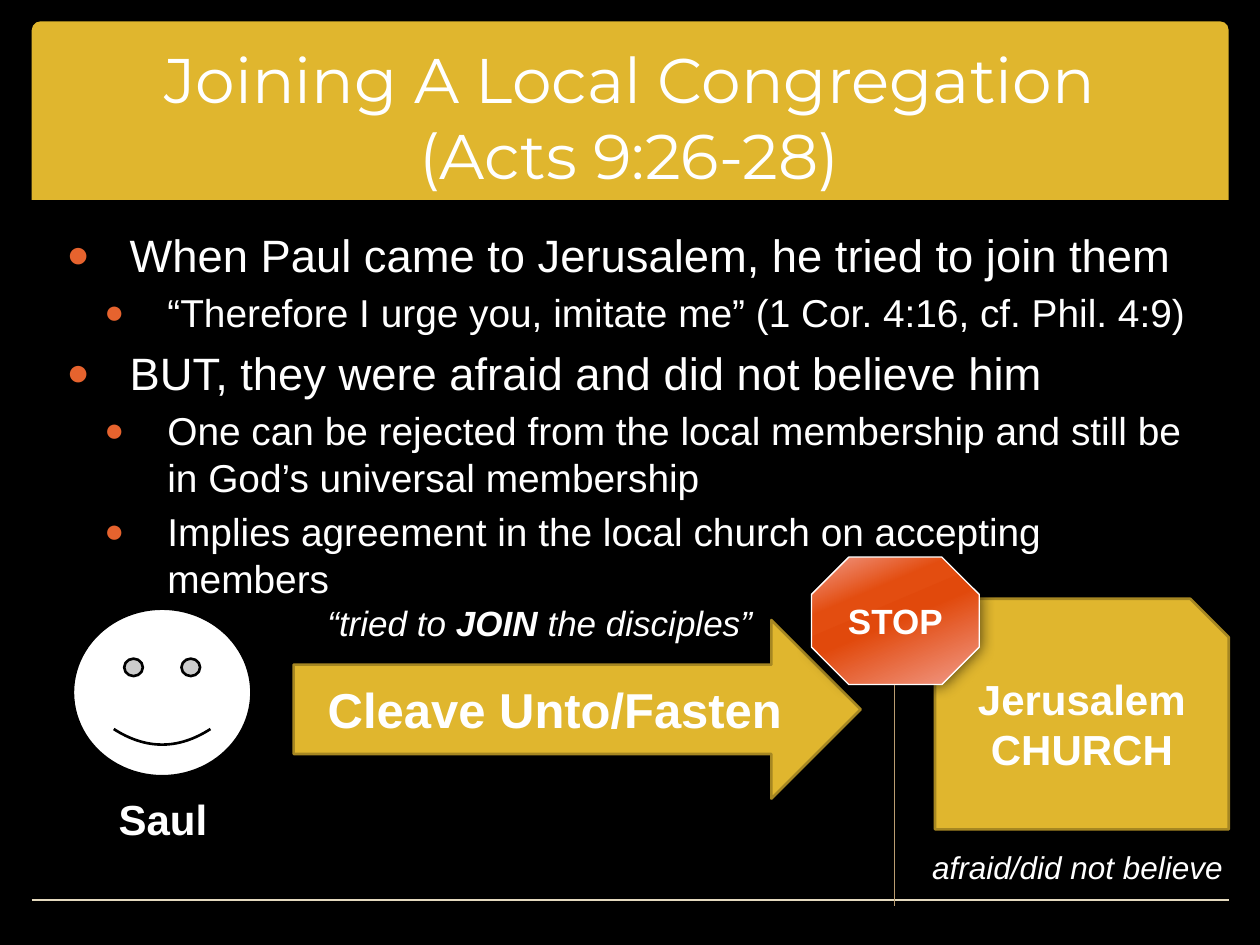
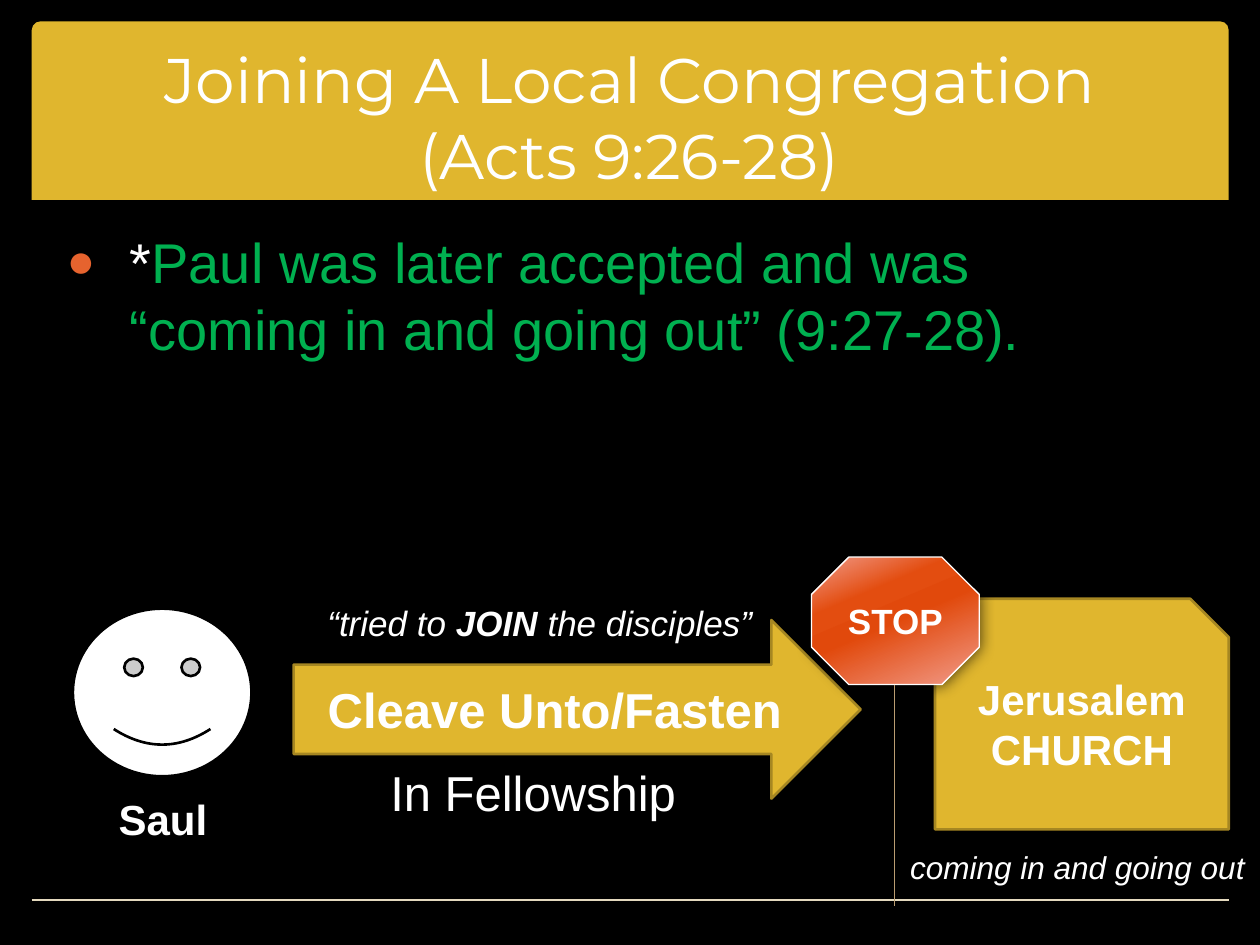
from lxml.etree import SubElement
from pptx import Presentation
from pptx.dml.color import RGBColor
from pptx.enum.shapes import MSO_CONNECTOR, MSO_SHAPE
from pptx.enum.text import MSO_ANCHOR, MSO_AUTO_SIZE, PP_ALIGN
from pptx.oxml.ns import qn
from pptx.util import Cm, Pt

BLACK, WHITE, GREEN = "000000", "FFFFFF", "00B050"
GOLD, DARK_GOLD, CREAM, TAN = "E0B62E", "A68722", "E4D9BE", "BA9D72"
BULLET = "E6632E"
STOP_STOPS = [(0, "F19B8A"), (30, "E34D10"), (50, "E1490C"), (100, "F19B8A")]
TITLE_FONT, BODY_FONT = "Montserrat", "Arial"


def rgb(hex_color):
    return RGBColor.from_string(hex_color)


def add_xml(parent, tag, **attributes):
    return SubElement(parent, qn(tag), {k: str(v) for k, v in attributes.items()})


def place(shape, box):
    shape.left, shape.top, shape.width, shape.height = map(Cm, box)


class Deck:
    def __init__(self):
        self.prs = Presentation()
        self.prs.slide_width, self.prs.slide_height = Cm(25.4), Cm(19.05)
        self.layout = self.prs.slide_layouts[1]
        background = self.prs.slide_master.background.fill
        background.solid()
        background.fore_color.rgb = rgb(BLACK)
        self.slide = None

    def new_slide(self):
        self.slide = self.prs.slides.add_slide(self.layout)

    def share(self, *shapes):
        """Move shapes from the current slide to the back of the layout."""
        for shape in shapes:
            self.layout.placeholders[0]._element.addprevious(shape._element)

    def set_text(self, paragraph, pieces, size, font=BODY_FONT, align=None, **style):
        """Fill a paragraph with text, or with (text, bold, colour) pieces."""
        paragraph.alignment = align
        paragraph.font.name, paragraph.font.size = font, Pt(size)
        paragraph.font.color.rgb = rgb(WHITE)
        for key, value in style.items():
            setattr(paragraph.font, key, value)
        if isinstance(pieces, str):
            pieces = [(pieces, None, None)]
        for text, bold, color in pieces:
            for number, line in enumerate(text.split("\n")):
                if number:
                    paragraph.add_line_break()
                run = paragraph.add_run()
                run.text = line
                if bold is not None:
                    run.font.bold = bold
                if color:
                    run.font.color.rgb = rgb(color)

    def title(self, text):
        title = self.slide.shapes.title
        place(title, (0.84, 0.76, 23.7, 3.18))
        frame = title.text_frame
        frame.auto_size = MSO_AUTO_SIZE.NONE
        frame.vertical_anchor = MSO_ANCHOR.MIDDLE
        self.set_text(frame.paragraphs[0], text, 36, TITLE_FONT, PP_ALIGN.CENTER)

    def bullets(self, items, sizes):
        """Fill the body with (level, pieces) items; sizes are per level."""
        body = self.slide.placeholders[1]
        place(body, (0.84, 4.45, 23.7, 7.42))
        body.fill.solid()
        body.fill.fore_color.rgb = rgb(BLACK)
        frame = body.text_frame
        frame.auto_size = MSO_AUTO_SIZE.NONE
        for number, (level, pieces) in enumerate(items):
            paragraph = frame.add_paragraph() if number else frame.paragraphs[0]
            paragraph.level = level
            properties = paragraph._p.get_or_add_pPr()
            properties.set("marL", str(Cm(1.52 + 0.76 * level)))
            properties.set("indent", str(Cm(-1.27)))
            add_xml(add_xml(properties, "a:buClr"), "a:srgbClr", val=BULLET)
            add_xml(properties, "a:buSzPct", val=85000)
            add_xml(properties, "a:buFont", typeface=BODY_FONT)
            add_xml(properties, "a:buChar", char="●")
            paragraph.space_before = Pt(round(sizes[level] * 0.2, 1))
            self.set_text(paragraph, pieces, sizes[level])

    def shape(self, kind, box, fill, line=None, weight=1.5, text=None, size=24):
        shape = self.slide.shapes.add_shape(kind, *map(Cm, box))
        shape.shadow.inherit = False
        shape.fill.solid()
        shape.fill.fore_color.rgb = rgb(fill)
        if line:
            shape.line.color.rgb = rgb(line)
            shape.line.width = Pt(weight)
        else:
            shape.line.fill.background()
        if text:
            frame = shape.text_frame
            frame.vertical_anchor = MSO_ANCHOR.MIDDLE
            self.set_text(frame.paragraphs[0], text, size,
                          align=PP_ALIGN.CENTER, bold=True)
        return shape

    def label(self, box, pieces, size, align=PP_ALIGN.CENTER, **style):
        label = self.slide.shapes.add_textbox(*map(Cm, box))
        frame = label.text_frame
        frame.word_wrap = False
        frame.auto_size = MSO_AUTO_SIZE.SHAPE_TO_FIT_TEXT
        self.set_text(frame.paragraphs[0], pieces, size, align=align, **style)
        return label

    def line(self, start, end, color, weight):
        line = self.slide.shapes.add_connector(
            MSO_CONNECTOR.STRAIGHT, *map(Cm, start + end))
        line.line.color.rgb = rgb(color)
        line.line.width = Pt(weight)
        add_xml(line._element.spPr, "a:effectLst")
        return line

    def group(self, *shapes):
        return self.slide.shapes.add_group_shape(shapes)

    def glossy(self, shape, stops, angle):
        """Give a shape a gradient of (percent, colour) stops and a soft shadow."""
        shape.fill.gradient()
        shape.fill.gradient_angle = 360 - angle
        properties = shape._element.spPr
        stop_list = properties.find(".//" + qn("a:gsLst"))
        stop_list.clear()
        for percent, color in stops:
            stop = add_xml(stop_list, "a:gs", pos=percent * 1000)
            add_xml(stop, "a:srgbClr", val=color)
        shadow = add_xml(properties.find(qn("a:effectLst")), "a:outerShdw",
                         blurRad=Pt(8.7), dist=0, dir=0, rotWithShape=0)
        add_xml(add_xml(shadow, "a:srgbClr", val=BLACK), "a:alpha", val=65000)


def add_frame(deck):
    band = deck.shape(MSO_SHAPE.ROUND_2_SAME_RECTANGLE,
                      (0.64, 0.43, 24.13, 3.6), GOLD)
    band.adjustments[0], band.adjustments[1] = 0.05, 0
    deck.share(band, deck.line((0.64, 18.14), (24.77, 18.14), CREAM, 1))


def add_joining_scene(deck, caption):
    """Saul, the arrow, the church and the stop sign between them."""
    deck.group(
        deck.shape(MSO_SHAPE.SMILEY_FACE, (1.47, 12.27, 3.6, 3.38), WHITE, BLACK),
        deck.label((2.13, 15.88, 2.31, 1.27), "Saul", 24, bold=True))
    deck.shape(MSO_SHAPE.SNIP_2_SAME_RECTANGLE, (18.85, 12.07, 5.92, 4.65),
               GOLD, DARK_GOLD, text="Jerusalem CHURCH")
    deck.shape(MSO_SHAPE.RIGHT_ARROW, (5.92, 12.5, 11.43, 3.6),
               GOLD, DARK_GOLD, text="Cleave Unto/Fasten", size=28)
    deck.label((6.35, 12.01, 9.14, 1.12),
               [("“tried to ", None, None), ("JOIN ", True, None),
                ("the disciples”", None, None)],
               20, PP_ALIGN.LEFT, italic=True)
    stop_sign = deck.shape(MSO_SHAPE.OCTAGON, (16.36, 11.23, 3.38, 2.57),
                           BULLET, WHITE, 0.75, "STOP", 20)
    deck.glossy(stop_sign, STOP_STOPS, 67)
    deck.group(stop_sign, deck.line((18.03, 13.8), (18.03, 18.26), TAN, 0.75))
    deck.label((18.06, 16.97, 7.32, 1.02), caption, 18, italic=True)


def main():
    deck = Deck()
    lessons = [
        ("afraid/did not believe", (25.9, 22.2), [
            (0, "When Paul came to Jerusalem, he tried to join them"),
            (1, "“Therefore I urge you, imitate me” (1 Cor. 4:16, cf. Phil. 4:9)"),
            (0, "BUT, they were afraid and did not believe him"),
            (1, "One can be rejected from the local membership and still be "
                "in God’s universal membership"),
            (1, "Implies agreement in the local church on accepting members"),
        ]),
        ("coming in and going out", (32,), [
            (0, [("*", None, None),
                 ("Paul was later accepted and was \n"
                  "“coming in and going out” (9:27-28).", None, GREEN)]),
        ]),
    ]
    for number, (caption, sizes, items) in enumerate(lessons):
        deck.new_slide()
        if number == 0:
            add_frame(deck)
        deck.title("Joining A Local Congregation\n(Acts 9:26-28)")
        deck.bullets(items, sizes)
        add_joining_scene(deck, caption)
    deck.label((7.62, 15.24, 6.35, 1.45), "In Fellowship", 28, PP_ALIGN.LEFT)
    deck.prs.save("out.pptx")


if __name__ == "__main__":
    main()
